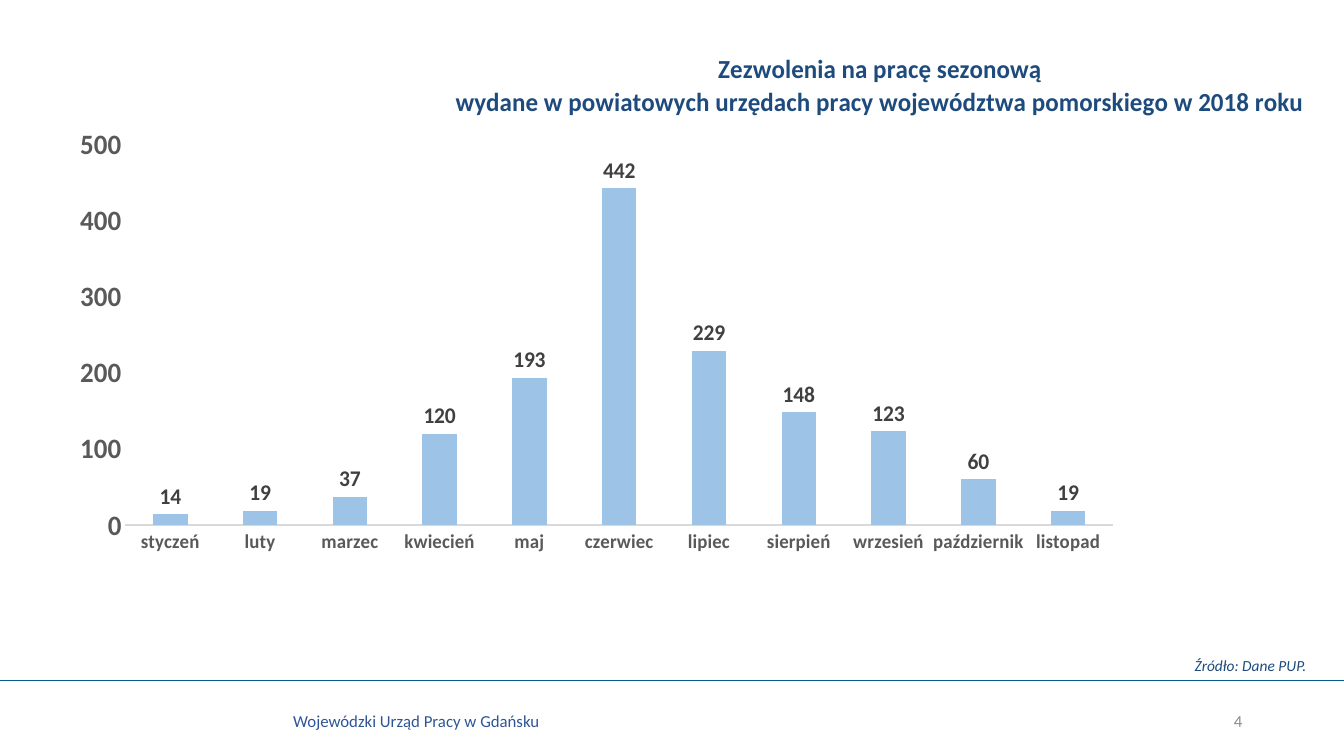
"""Build the slide on seasonal work permits issued in Pomorskie in 2018."""
from lxml import etree
from pptx import Presentation
from pptx import util as u
from pptx.chart import data as chart_data
from pptx.dml.color import RGBColor
from pptx.enum import chart as ch, shapes, text
from pptx.oxml import parse_xml
from pptx.oxml.ns import nsdecls, qn

NAVY = RGBColor(0x1E, 0x4B, 0x7D)
BLUE = RGBColor(0x2F, 0x55, 0x97)
TEAL = RGBColor(0x06, 0x5B, 0x8A)
SKY = RGBColor(0x9D, 0xC3, 0xE6)
DARK = RGBColor(0x40, 0x40, 0x40)
SLATE = RGBColor(0x59, 0x59, 0x59)
GREY = RGBColor(0x8C, 0x8C, 0x8C)
SILVER = RGBColor(0xD9, 0xD9, 0xD9)

PERMITS = {
    "styczeń": 14, "luty": 19, "marzec": 37, "kwiecień": 120,
    "maj": 193, "czerwiec": 442, "lipiec": 229, "sierpień": 148,
    "wrzesień": 123, "październik": 60, "listopad": 19,
}
HEADING = (
    "Zezwolenia na pracę sezonową",
    "wydane w powiatowych urzędach pracy województwa pomorskiego w 2018 roku",
)


def apply(target, **values):
    """Set each given attribute on the target."""
    for name, value in values.items():
        setattr(target, name, value)


class SlideBuilder:
    """Hold the typeface and the current slide, and add elements to it."""

    def __init__(self, slide, typeface="Calibri"):
        self.slide = slide
        self.typeface = typeface

    def style(self, font, size, color, **extra):
        """Give a font the typeface, size, colour and further settings."""
        apply(font, name=self.typeface, size=u.Pt(size), **extra)
        font.color.rgb = color

    def rule(self, x1, y1, x2, y2, color):
        """Draw a thin straight line without a shadow."""
        divider = self.slide.shapes.add_connector(
            shapes.MSO_CONNECTOR.STRAIGHT, *map(u.Inches, (x1, y1, x2, y2)))
        divider.line.color.rgb = color
        divider.line.width = u.Pt(1)
        etree.SubElement(divider._element.spPr, qn("a:effectLst"))

    def label(self, wording, box, size, color, frame=None, align=None, **extra):
        """Place one line of text."""
        caption = self.slide.shapes.add_textbox(*map(u.Inches, box)).text_frame
        apply(caption, **{"word_wrap": True, **(frame or {})})
        line = caption.paragraphs[0]
        line.text = wording
        line.alignment = align
        self.style(line.runs[0].font, size, color, **extra)

    def place(self, parent, **shares):
        """Fix a chart part at the given shares of the chart area."""
        target = '<c:layoutTarget val="inner"/>' if "w" in shares else ""
        modes = "".join(f'<c:{k}Mode val="edge"/>' for k in "xy")
        sizes = "".join(f'<c:{k} val="{v}"/>' for k, v in shares.items())
        layout = parse_xml(
            f'<c:layout {nsdecls("c")}><c:manualLayout>{target}{modes}{sizes}'
            "</c:manualLayout></c:layout>")
        for old in parent.findall(qn("c:layout")):
            parent.remove(old)
        tx = parent.find(qn("c:tx"))
        if tx is None:
            parent.insert(0, layout)
        else:
            tx.addnext(layout)

    def heading(self, chart, lines):
        """Write the chart title, one paragraph a line."""
        title = chart.chart_title
        title.include_in_layout = False
        frame = title.text_frame
        for number, wording in enumerate(lines):
            line = frame.add_paragraph() if number else frame.paragraphs[0]
            line.alignment = text.PP_ALIGN.CENTER
            run = line.add_run()
            run.text = wording
            self.style(run.font, 18.6, NAVY, bold=True)
        self.place(title._element, x=0.336, y=0.045)

    def columns(self, values, lines, box):
        """Add a column chart with value labels and a title."""
        months = chart_data.CategoryChartData(number_format="#,##0")
        months.categories = list(values)
        months.add_series("Zezwolenia", list(values.values()))
        chart = self.slide.shapes.add_chart(
            ch.XL_CHART_TYPE.COLUMN_CLUSTERED, *map(u.Inches, box), months).chart
        chart.has_legend = False
        chart.font.name = self.typeface
        chart.font.size = u.Pt(10)
        self.heading(chart, lines)
        self.place(chart._chartSpace.chart.plotArea,
                   x=0.066, y=0.202, w=0.815, h=0.626)

        plot = chart.plots[0]
        apply(plot, gap_width=160, overlap=-24, vary_by_categories=False,
              has_data_labels=True)
        fill = plot.series[0].format.fill
        fill.solid()
        fill.fore_color.rgb = SKY
        apply(plot.data_labels, show_value=True, number_format="#,##0",
              number_format_is_linked=False,
              position=ch.XL_LABEL_POSITION.OUTSIDE_END)
        self.style(plot.data_labels.font, 16, DARK, bold=True)

        for axis, size in ((chart.category_axis, 14), (chart.value_axis, 20)):
            apply(axis, has_major_gridlines=False,
                  major_tick_mark=ch.XL_TICK_MARK.NONE,
                  minor_tick_mark=ch.XL_TICK_MARK.NONE)
            self.style(axis.tick_labels.font, size, SLATE, bold=True)
        apply(chart.value_axis, minimum_scale=0, maximum_scale=500, major_unit=100)
        apply(chart.value_axis.tick_labels, number_format="0",
              number_format_is_linked=False)
        chart.value_axis.format.line.fill.background()
        chart.category_axis.format.line.color.rgb = SILVER
        chart.category_axis.format.line.width = u.Pt(1)


def main():
    """Build and save the presentation."""
    deck = Presentation()
    apply(deck, slide_width=u.Inches(13.33), slide_height=u.Inches(7.5))
    page = SlideBuilder(deck.slides.add_slide(deck.slide_layouts[6]))
    page.rule(0, 6.75, 13.33, 6.75, TEAL)
    page.label("Wojewódzki Urząd Pracy w Gdańsku", (2.81, 7, 3.56, 0.3), 12, BLUE)
    page.label("4", (9.42, 6.95, 3, 0.4), 12, GREY,
               frame={"vertical_anchor": text.MSO_ANCHOR.MIDDLE},
               align=text.PP_ALIGN.RIGHT)
    page.columns(PERMITS, HEADING, (0.45, 0.21, 12.52, 6.04))
    page.label("Źródło: Dane PUP.", (11.75, 6.46, 1.33, 0.29), 11, NAVY,
               frame={"word_wrap": False}, italic=True)
    deck.save("out.pptx")


if __name__ == "__main__":
    main()
